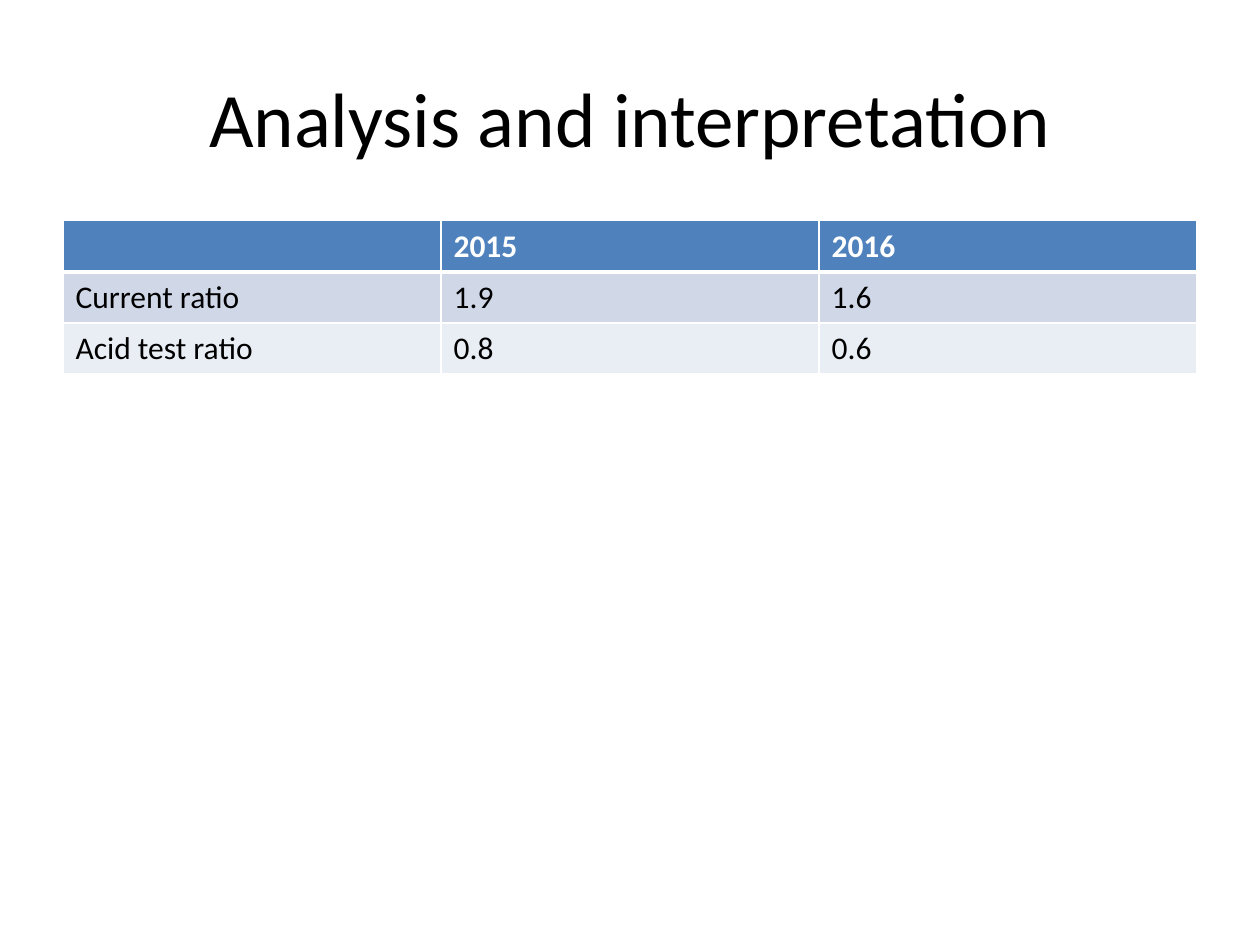
from dataclasses import dataclass

from lxml import etree
from pptx import Presentation
from pptx.dml.color import RGBColor
from pptx.enum import shapes, text
from pptx.oxml import ns
from pptx.util import Cm, Pt

FONT = "Calibri"
BLACK = RGBColor(0x00, 0x00, 0x00)
WHITE = RGBColor(0xFF, 0xFF, 0xFF)
HEADER_BLUE = RGBColor(0x4F, 0x81, 0xBD)
BAND_DARK = RGBColor(0xD0, 0xD8, 0xE8)
BAND_LIGHT = RGBColor(0xE9, 0xED, 0xF4)

MARGIN = Cm(1.27)
CONTENT_WIDTH = Cm(22.86)
ROW_HEIGHT = Cm(1.03)


@dataclass(frozen=True)
class RatioRow:
    cells: tuple[str, ...]
    fill: RGBColor
    color: RGBColor = BLACK
    bold: bool = False
    top_rule: int = 1
    bottom_rule: int = 1


RATIO_ROWS = (
    RatioRow(("", "2015", "2016"), HEADER_BLUE, WHITE, True, bottom_rule=3),
    RatioRow(("Current ratio", "1.9", "1.6"), BAND_DARK, top_rule=3),
    RatioRow(("Acid test ratio", "0.8", "0.6"), BAND_LIGHT),
)


def add_run(paragraph, words: str, size: int, color: RGBColor, bold: bool = False) -> None:
    run = paragraph.add_run()
    run.text = words
    run.font.name = FONT
    run.font.size = Pt(size)
    run.font.bold = bold
    run.font.color.rgb = color


def add_title(slide, words: str) -> None:
    title = slide.shapes.add_shape(
        shapes.MSO_SHAPE.RECTANGLE, MARGIN, Cm(0.76), CONTENT_WIDTH, Cm(3.18)
    )
    title.shadow.inherit = False
    title.fill.solid()
    title.fill.fore_color.rgb = WHITE
    title.line.fill.background()
    frame = title.text_frame
    frame.word_wrap = True
    frame.vertical_anchor = text.MSO_ANCHOR.MIDDLE
    heading = frame.paragraphs[0]
    heading.alignment = text.PP_ALIGN.CENTER
    add_run(heading, words, 44, BLACK)


def set_borders(cell, top: int, bottom: int) -> None:
    """Draw white cell borders; top and bottom are widths in points."""
    properties = cell._tc.get_or_add_tcPr()
    widths = {"a:lnL": 1, "a:lnR": 1, "a:lnT": top, "a:lnB": bottom}
    for position, (tag, width) in enumerate(widths.items()):
        border = etree.Element(ns.qn(tag), w=str(Pt(width)))
        fill = etree.SubElement(border, ns.qn("a:solidFill"))
        etree.SubElement(fill, ns.qn("a:srgbClr"), val=str(WHITE))
        properties.insert(position, border)


def add_ratio_table(slide, rows: tuple[RatioRow, ...]) -> None:
    table = slide.shapes.add_table(
        len(rows), len(rows[0].cells), MARGIN, Cm(4.45),
        CONTENT_WIDTH, ROW_HEIGHT * len(rows),
    ).table
    for table_row, ratio in zip(table.rows, rows):
        for cell, words in zip(table_row.cells, ratio.cells):
            cell.fill.solid()
            cell.fill.fore_color.rgb = ratio.fill
            set_borders(cell, ratio.top_rule, ratio.bottom_rule)
            if words:
                add_run(cell.text_frame.paragraphs[0], words, 18, ratio.color, ratio.bold)


def main() -> None:
    deck = Presentation()
    deck.slide_width, deck.slide_height = Cm(25.4), Cm(19.05)
    slide = deck.slides.add_slide(deck.slide_layouts[6])
    add_title(slide, "Analysis and interpretation")
    add_ratio_table(slide, RATIO_ROWS)
    deck.save("out.pptx")


if __name__ == "__main__":
    main()
